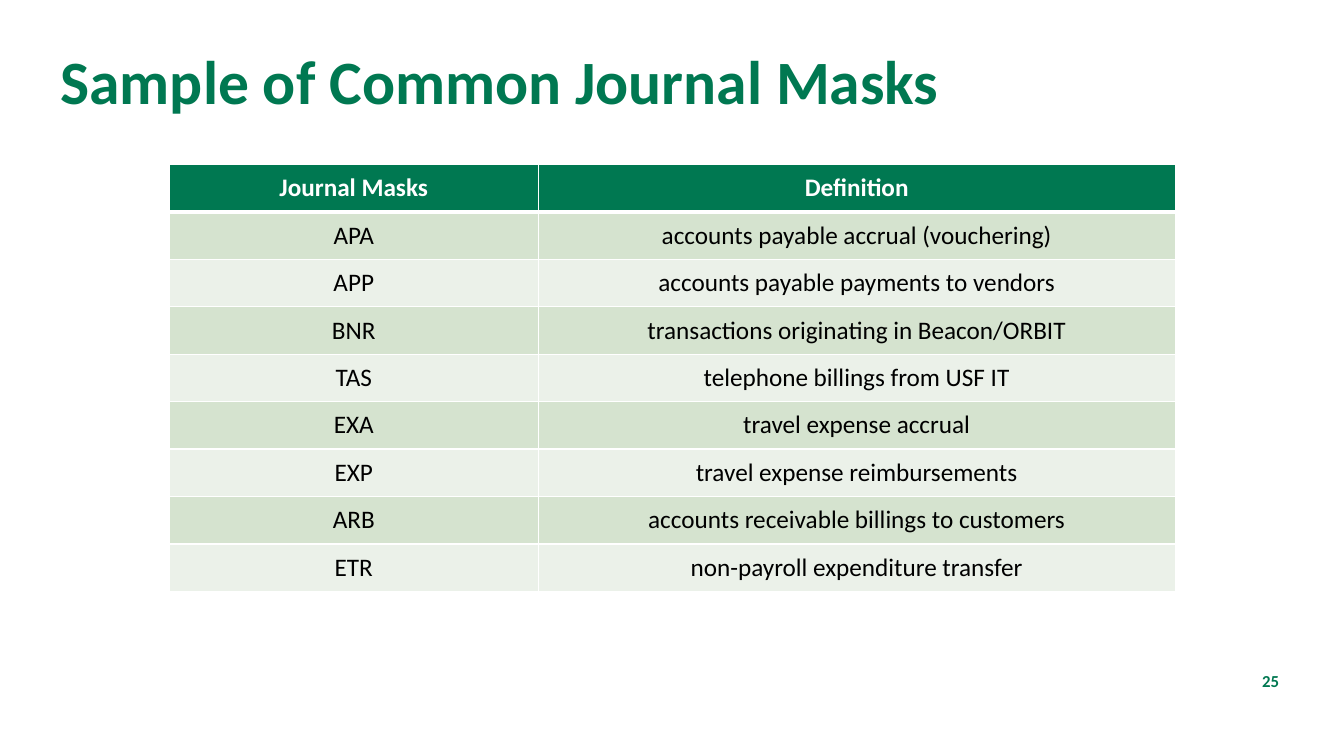
"""Build a slide with a table of common journal masks."""
from dataclasses import dataclass

import lxml.etree
import pptx
import pptx.dml.color
import pptx.enum.text
import pptx.oxml.ns
import pptx.util

Pt = pptx.util.Pt
ALIGN = pptx.enum.text.PP_ALIGN
ANCHOR = pptx.enum.text.MSO_ANCHOR

GREEN, WHITE, BLACK = "007851", "FFFFFF", "000000"
BANDS = ("D5E3CF", "EBF1E9")
COLUMN_WIDTHS = (263.5, 455)
ROW_HEIGHT = 33.92


@dataclass
class Mask:
    code: str
    definition: str


HEADER = Mask("Journal Masks", "Definition")
MASKS = [
    Mask("APA", "accounts payable accrual (vouchering)"),
    Mask("APP", "accounts payable payments to vendors"),
    Mask("BNR", "transactions originating in Beacon/ORBIT"),
    Mask("TAS", "telephone billings from USF IT"),
    Mask("EXA", "travel expense accrual"),
    Mask("EXP", "travel expense reimbursements"),
    Mask("ARB", "accounts receivable billings to customers"),
    Mask("ETR", "non-payroll expenditure transfer"),
]


def rgb(value: str) -> pptx.dml.color.RGBColor:
    return pptx.dml.color.RGBColor.from_string(value)


def set_attributes(target, values: dict) -> None:
    for name, value in values.items():
        setattr(target, name, value)


def write(frame, text: str, size: float, color: str, bold: bool, align) -> None:
    paragraph = frame.paragraphs[0]
    paragraph.alignment = align
    run = paragraph.add_run()
    run.text = text
    set_attributes(run.font, {"name": "Calibri", "size": Pt(size), "bold": bold})
    run.font.color.rgb = rgb(color)


def place(shape, left: float, top: float, width: float, height: float) -> None:
    set_attributes(shape, {"left": Pt(left), "top": Pt(top),
                           "width": Pt(width), "height": Pt(height)})


def add_borders(cell, top: float, bottom: float) -> None:
    qn = pptx.oxml.ns.qn
    properties = cell._tc.get_or_add_tcPr()
    widths = {"a:lnL": 1, "a:lnR": 1, "a:lnT": top, "a:lnB": bottom}
    for index, (side, width) in enumerate(widths.items()):
        line = lxml.etree.Element(qn(side), w=str(int(Pt(width))))
        fill = lxml.etree.SubElement(line, qn("a:solidFill"))
        lxml.etree.SubElement(fill, qn("a:srgbClr"), val=WHITE)
        properties.insert(index, line)


def add_title(slide, text: str) -> None:
    title = slide.shapes.title
    place(title, 36, 33.12, 884.88, 61.2)
    set_attributes(title.text_frame, {"word_wrap": True, "vertical_anchor": ANCHOR.TOP,
                                      "auto_size": pptx.enum.text.MSO_AUTO_SIZE.NONE})
    write(title.text_frame, text, 44, GREEN, True, ALIGN.LEFT)
    title.text_frame.paragraphs[0].line_spacing = 0.9


def add_slide_number(slide, text: str) -> None:
    box = slide.shapes.add_textbox(Pt(853.92), Pt(475.92), Pt(66.96), Pt(20.88))
    set_attributes(box.text_frame, {"word_wrap": True, "vertical_anchor": ANCHOR.MIDDLE})
    write(box.text_frame, text, 12, GREEN, True, ALIGN.RIGHT)


def add_mask_table(slide, rows: list[Mask]) -> None:
    table = slide.shapes.add_table(
        len(rows), len(COLUMN_WIDTHS), Pt(120.96), Pt(117.36),
        Pt(sum(COLUMN_WIDTHS)), Pt(ROW_HEIGHT * len(rows))).table
    for column, width in zip(table.columns, COLUMN_WIDTHS):
        column.width = Pt(width)
    for index, mask in enumerate(rows):
        table.rows[index].height = Pt(ROW_HEIGHT)
        header = index == 0
        for cell, text in zip(table.rows[index].cells, (mask.code, mask.definition)):
            cell.vertical_anchor = ANCHOR.MIDDLE
            cell.fill.solid()
            cell.fill.fore_color.rgb = rgb(GREEN if header else BANDS[(index - 1) % 2])
            add_borders(cell, top=3 if index == 1 else 1, bottom=3 if header else 1)
            write(cell.text_frame, text, 18, WHITE if header else BLACK,
                  header, ALIGN.CENTER)


def main() -> None:
    presentation = pptx.Presentation()
    set_attributes(presentation, {"slide_width": Pt(960), "slide_height": Pt(540)})
    slide = presentation.slides.add_slide(presentation.slide_layouts[5])
    add_title(slide, "Sample of Common Journal Masks")
    add_slide_number(slide, "25")
    add_mask_table(slide, [HEADER, *MASKS])
    presentation.save("out.pptx")


if __name__ == "__main__":
    main()
